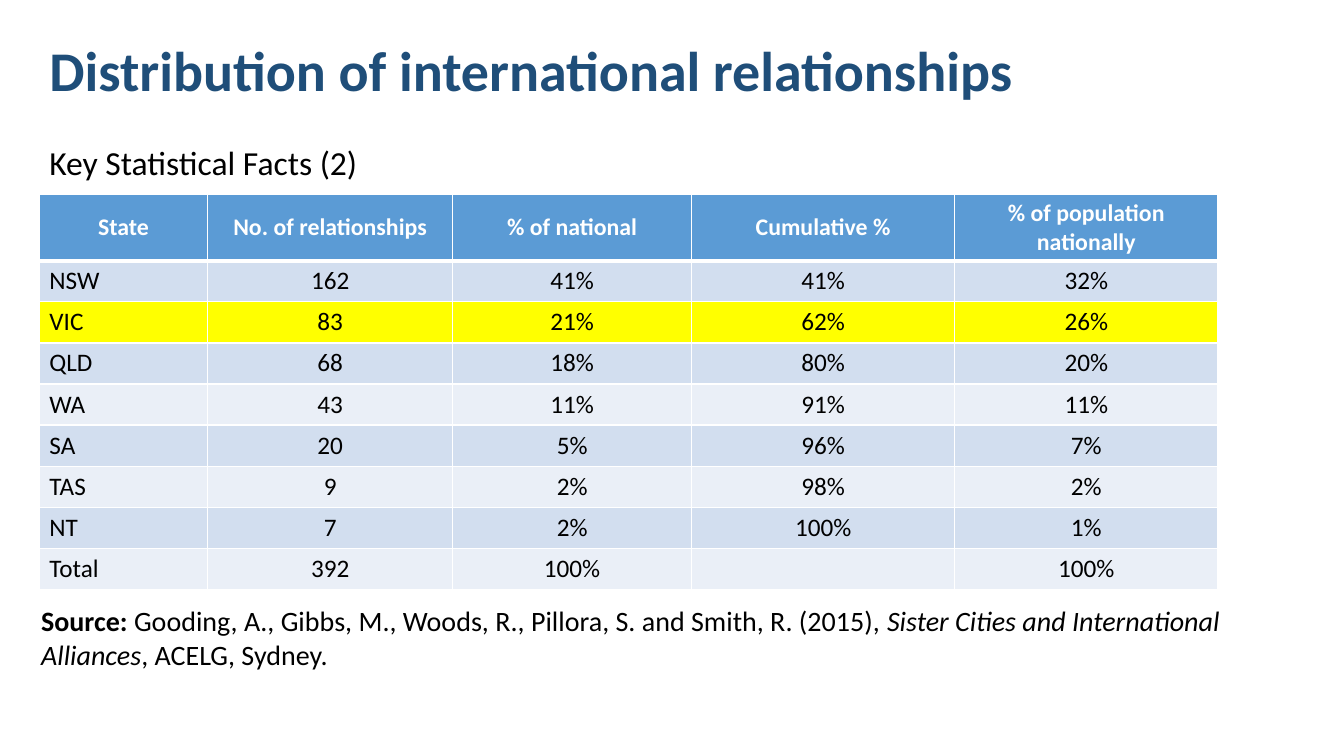
from lxml.etree import SubElement
from pptx import Presentation
from pptx.dml.color import RGBColor
from pptx.enum.text import MSO_ANCHOR as Anchor, MSO_AUTO_SIZE as AutoSize, PP_ALIGN as Align
from pptx.oxml.ns import qn
from pptx.util import Inches, Pt

COLORS = {
    "title": "1F4E79", "text": "000000", "white": "FFFFFF", "header": "5B9BD5",
    "band_dark": "D2DEEF", "band_light": "EAEFF7", "highlight": "FFFF00",
}
FONT = "Calibri"
SLIDE_W, SLIDE_H = 13.33, 7.5
LEFT = 0.39

HEADINGS = ["State", "No. of relationships", "% of national", "Cumulative %",
            "% of population\nnationally"]
STATES = [
    ["NSW", "162", "41%", "41%", "32%"],
    ["VIC", "83", "21%", "62%", "26%"],
    ["QLD", "68", "18%", "80%", "20%"],
    ["WA", "43", "11%", "91%", "11%"],
    ["SA", "20", "5%", "96%", "7%"],
    ["TAS", "9", "2%", "98%", "2%"],
    ["NT", "7", "2%", "100%", "1%"],
    ["Total", "392", "100%", "", "100%"],
]
HIGHLIGHTED_STATE = "VIC"
COLUMN_WIDTHS = [1.67, 2.43, 2.37, 2.61, 2.61]
HEADER_HEIGHT = 0.65
SOURCE = [
    ("Source:", {"bold": True}),
    (" Gooding, A., Gibbs, M., Woods, R., Pillora, S. and Smith, R. (2015), ", {}),
    ("Sister Cities and International Alliances", {"italic": True}),
    (", ACELG, Sydney.", {}),
]


def add_run(paragraph, text, size=18, color="text", bold=False, italic=False):
    run = paragraph.add_run()
    run.text = text
    font = run.font
    font.name, font.size, font.bold, font.italic = FONT, Pt(size), bold, italic
    font.color.rgb = RGBColor.from_string(COLORS[color])


def write(frame, text, align=Align.LEFT, **style):
    """Write one paragraph for each line of text."""
    for index, line in enumerate(text.split("\n")):
        paragraph = frame.paragraphs[0] if index == 0 else frame.add_paragraph()
        paragraph.alignment = align
        if line:
            add_run(paragraph, line, **style)


def add_title(slide, box):
    title = slide.shapes.title
    title.left, title.top, title.width, title.height = map(Inches, box)
    frame = title.text_frame
    frame.auto_size, frame.vertical_anchor = AutoSize.NONE, Anchor.TOP
    write(frame, "Distribution of international relationships",
          size=40, color="title", bold=True)


def add_text_frame(slide, box):
    frame = slide.shapes.add_textbox(*map(Inches, box)).text_frame
    frame.word_wrap = True
    return frame


def add_subtitle(slide, box):
    write(add_text_frame(slide, box), "Key Statistical Facts (2)", size=24)


def add_source(slide, box):
    paragraph = add_text_frame(slide, box).paragraphs[0]
    for text, style in SOURCE:
        add_run(paragraph, text, size=20, **style)


def set_borders(cell, **widths):
    properties = cell._tc.get_or_add_tcPr()
    for side in "LRTB":
        line = SubElement(properties, qn(f"a:ln{side}"), w=str(Pt(widths.get(side, 1))))
        fill = SubElement(line, qn("a:solidFill"))
        SubElement(fill, qn("a:srgbClr"), val=COLORS["white"])


def set_fill(cell, color):
    cell.fill.solid()
    cell.fill.fore_color.rgb = RGBColor.from_string(COLORS[color])


def fill_header(cells):
    for cell, heading in zip(cells, HEADINGS):
        set_borders(cell, B=3)
        set_fill(cell, "header")
        cell.vertical_anchor = Anchor.MIDDLE
        cell.margin_top = cell.margin_bottom = Inches(0.04)
        write(cell.text_frame, heading, Align.CENTER, size=17, color="white", bold=True)


def fill_state(cells, state, index):
    band = "band_light" if index % 2 else "band_dark"
    color = "highlight" if state[0] == HIGHLIGHTED_STATE else band
    for column, (cell, value) in enumerate(zip(cells, state)):
        set_borders(cell, T=1 if index else 3)
        set_fill(cell, color)
        write(cell.text_frame, value, Align.CENTER if column else Align.LEFT)


def add_state_table(slide, box):
    table = slide.shapes.add_table(len(STATES) + 1, len(HEADINGS),
                                   *map(Inches, box)).table
    for column, width in zip(table.columns, COLUMN_WIDTHS):
        column.width = Inches(width)
    header, *state_rows = table.rows
    header.height = Inches(HEADER_HEIGHT)
    fill_header(header.cells)
    for index, (row, state) in enumerate(zip(state_rows, STATES)):
        row.height = Inches((box[3] - HEADER_HEIGHT) / len(STATES))
        fill_state(row.cells, state, index)


def main():
    deck = Presentation()
    deck.slide_width, deck.slide_height = Inches(SLIDE_W), Inches(SLIDE_H)
    slide = deck.slides.add_slide(deck.slide_layouts.get_by_name("Title Only"))
    add_state_table(slide, (LEFT, 1.93, sum(COLUMN_WIDTHS), 3.91))
    add_source(slide, (0.31, 5.94, 12.37, 0.77))
    add_title(slide, (LEFT, 0.3, 10.78, 0.77))
    add_subtitle(slide, (LEFT, 1.36, 3.42, 0.5))
    deck.save("out.pptx")


if __name__ == "__main__":
    main()
